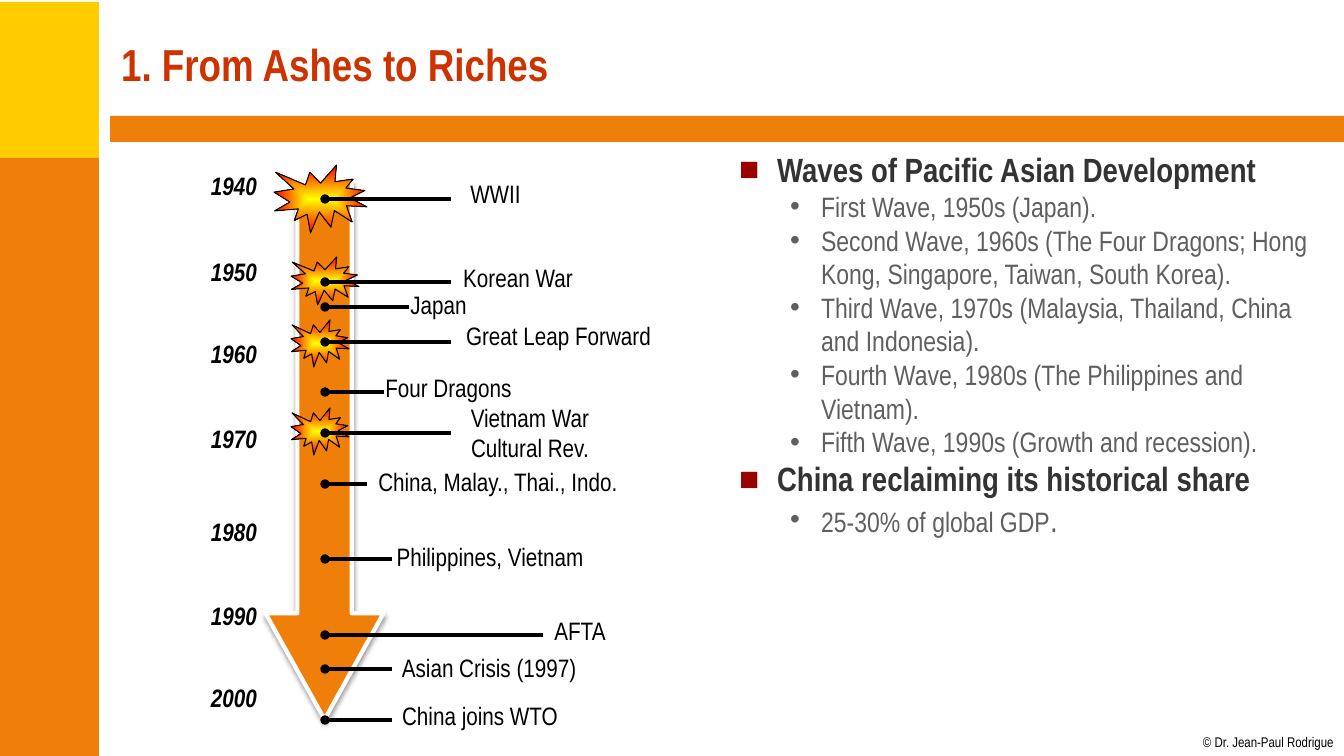
from lxml import etree
from pptx import Presentation
from pptx.dml.color import RGBColor
from pptx.enum.shapes import MSO_CONNECTOR as Conn, MSO_SHAPE as Kind
from pptx.enum.text import MSO_ANCHOR as Anchor, MSO_AUTO_SIZE as Auto, PP_ALIGN as Align
from pptx.oxml import parse_xml
from pptx.oxml.ns import qn
from pptx.util import Pt

# Content
TITLE = "1. From Ashes to Riches"
CREDIT = "© Dr. Jean-Paul Rodrigue"
POINTS = [
    (0, ["Waves of Pacific Asian Development"]),
    (1, ["First Wave, 1950s (Japan)."]),
    (1, ["Second Wave, 1960s (The Four Dragons; Hong Kong, Singapore, Taiwan, South Korea)."]),
    (1, ["Third Wave, 1970s (Malaysia, Thailand, China and Indonesia)."]),
    (1, ["Fourth Wave, 1980s (The Philippines and Vietnam)."]),
    (1, ["Fifth Wave, 1990s (Growth and recession)."]),
    (0, ["China reclaiming its historical share"]),
    (1, ["25-30% of global GDP", "."]),
]
# Per level: margin, indent, bullet, bullet colour, size, text colour, bold
LEVELS = [
    (38, -38, "■", "990000", 24, "333333", True),
    (82, -31, "•", "5F5F5F", 20, "5F5F5F", False),
]
BANDS = [
    (-2, 2, 101, 159, "FFCC00"),
    (-2, 158, 101, 598, "F07F09"),
    (110, 116, 1234, 26, "F07F09"),
]
YEARS = {"1940": 165, "1950": 251, "1960": 333, "1970": 418,
         "1980": 511, "1990": 595, "2000": 677}
BURSTS = [(274, 165, 93, 68), (291, 257, 68, 48),
          (291, 320, 58, 47), (291, 408, 58, 47)]
# Line height, line end, label lines, label left, top, width, wrap, alignment
EVENTS = [
    (199, 451, ["WWII"], 460, 173, 71, False, Align.CENTER),
    (282, 451, ["Korean War"], 451, 257, 134, True, Align.CENTER),
    (307, 409, ["Japan"], 400, 284, 77, False, Align.CENTER),
    (342, 451, ["Great Leap Forward"], 448, 315, 221, True, Align.CENTER),
    (392, 384, ["Four Dragons"], 375, 367, 147, False, Align.CENTER),
    (433, 451, ["Vietnam War", "Cultural Rev."], 460, 397, 140, False, Align.CENTER),
    (484, 367, ["China, Malay., Thai., Indo."], 367, 461, 262, False, Align.CENTER),
    (559, 392, ["Philippines, Vietnam"], 386, 536, 208, False, Align.CENTER),
    (635, 543, ["AFTA"], 543, 610, 74, False, Align.CENTER),
    (669, 392, ["Asian Crisis (1997)"], 392, 647, 197, False, Align.LEFT),
    (720, 392, ["China joins WTO"], 392, 695, 176, False, Align.CENTER),
]
STEM = 325
FONT = "Arial Narrow"
NS = 'xmlns:a="http://schemas.openxmlformats.org/drawingml/2006/main"'


def px(*vals):
    return [round(v * 914400 / 100.8) for v in vals]


def rgb(code):
    return RGBColor.from_string(code)


def style(run, size, color="000000", bold=False, slant=False):
    font = run.font
    font.name, font.size = FONT, Pt(size)
    font.bold, font.italic = bold, slant
    font.color.rgb = rgb(color)


def shape(kind, box, fill, line=None, width=0):
    item = slide.shapes.add_shape(kind, *px(*box))
    item.shadow.inherit = False
    item.fill.solid()
    item.fill.fore_color.rgb = rgb(fill)
    if line:
        item.line.color.rgb = rgb(line)
        item.line.width = Pt(width)
    else:
        item.line.fill.background()
    return item


def label(lines, box, size=18, wrap=False, align=Align.LEFT, inset=True, **look):
    frame = slide.shapes.add_textbox(*px(*box)).text_frame
    frame.word_wrap = wrap
    frame.auto_size = Auto.SHAPE_TO_FIT_TEXT
    if not inset:
        frame.margin_left = frame.margin_right = 0
        frame.margin_top = frame.margin_bottom = 0
    frame.text = "\n".join(lines)
    for para in frame.paragraphs:
        para.alignment = align
        style(para.runs[0], size, **look)


def place(holder, box):
    holder.left, holder.top, holder.width, holder.height = px(*box)
    holder.text_frame.auto_size = Auto.NONE
    holder.text_frame.word_wrap = True
    return holder.text_frame


deck = Presentation()
deck.slide_width, deck.slide_height = px(1344, 756)
slide = deck.slides.add_slide(deck.slide_layouts[1])

# Bands and credit
for *box, color in BANDS:
    shape(Kind.RECTANGLE, box, color)
label([CREDIT], (1203, 734, 132, 17), size=10, inset=False)

# Title
head = place(slide.shapes.title, (111, 11, 1210, 105))
head.text = TITLE
head.vertical_anchor = Anchor.MIDDLE
head.paragraphs[0].alignment = Align.LEFT
style(head.paragraphs[0].runs[0], 32, "CC3300", bold=True)

# Bullet list
body = place(slide.placeholders[1], (729, 144, 595, 584))
body.vertical_anchor = Anchor.TOP
for i, (level, parts) in enumerate(POINTS):
    left, hang, mark, tint, size, color, bold = LEVELS[level]
    para = body.add_paragraph() if i else body.paragraphs[0]
    para.level = level
    props = para._p.get_or_add_pPr()
    for key, val in zip(("marL", "indent"), px(left, hang)):
        props.set(key, str(val))
    for xml in (f'<a:buClr {NS}><a:srgbClr val="{tint}"/></a:buClr>',
                f'<a:buFont {NS} typeface="Arial"/>',
                f'<a:buChar {NS} char="{mark}"/>'):
        props.append(parse_xml(xml))
    para.alignment = Align.LEFT
    para.line_spacing = 1.0
    para.space_before = para.space_after = Pt(0)
    for j, part in enumerate(parts):
        run = para.add_run()
        run.text = part
        style(run, 24 if j else size, color, bold)

# Time arrow
arrow = shape(Kind.RIGHT_ARROW, (56, 392, 537, 118), "F07F09", "FFFFFF", 3)
arrow.rotation = 90
arrow.adjustments[0], arrow.adjustments[1] = 0.46, 0.9
arrow._element.spPr.find(qn("a:effectLst")).append(parse_xml(
    f'<a:outerShdw {NS} blurRad="{Pt(3.1)}" dist="{Pt(1.6)}" dir="5400000" '
    'rotWithShape="0"><a:srgbClr val="000000"><a:alpha val="38000"/>'
    '</a:srgbClr></a:outerShdw>'))
for year, top in YEARS.items():
    label([year], (201, top, 67, 40), bold=True, slant=True)

# Conflict bursts
for box in BURSTS:
    props = shape(Kind.EXPLOSION1, box, "FFFF00", "000000", 0.75)._element.spPr
    props.replace(props.find(qn("a:solidFill")), parse_xml(
        f'<a:gradFill {NS} rotWithShape="1"><a:gsLst>'
        '<a:gs pos="0"><a:srgbClr val="FFFF00"/></a:gs>'
        '<a:gs pos="100000"><a:srgbClr val="FF0000"/></a:gs></a:gsLst>'
        '<a:path path="shape"><a:fillToRect l="50000" t="50000" r="50000" '
        'b="50000"/></a:path></a:gradFill>'))

# Events
for y, end, lines, left, top, width, wrap, align in EVENTS:
    lead = slide.shapes.add_connector(Conn.STRAIGHT, *px(end, y, STEM, y))
    lead.line.color.rgb = rgb("000000")
    lead.line.width = Pt(2.25)
    etree.SubElement(lead.line._get_or_add_ln(), qn("a:tailEnd"), type="oval")
    etree.SubElement(lead._element.spPr, qn("a:effectLst"))
    high = 40 + 31 * (len(lines) - 1)
    label(lines, (left, top, width, high), wrap=wrap, align=align)

deck.save("out.pptx")
